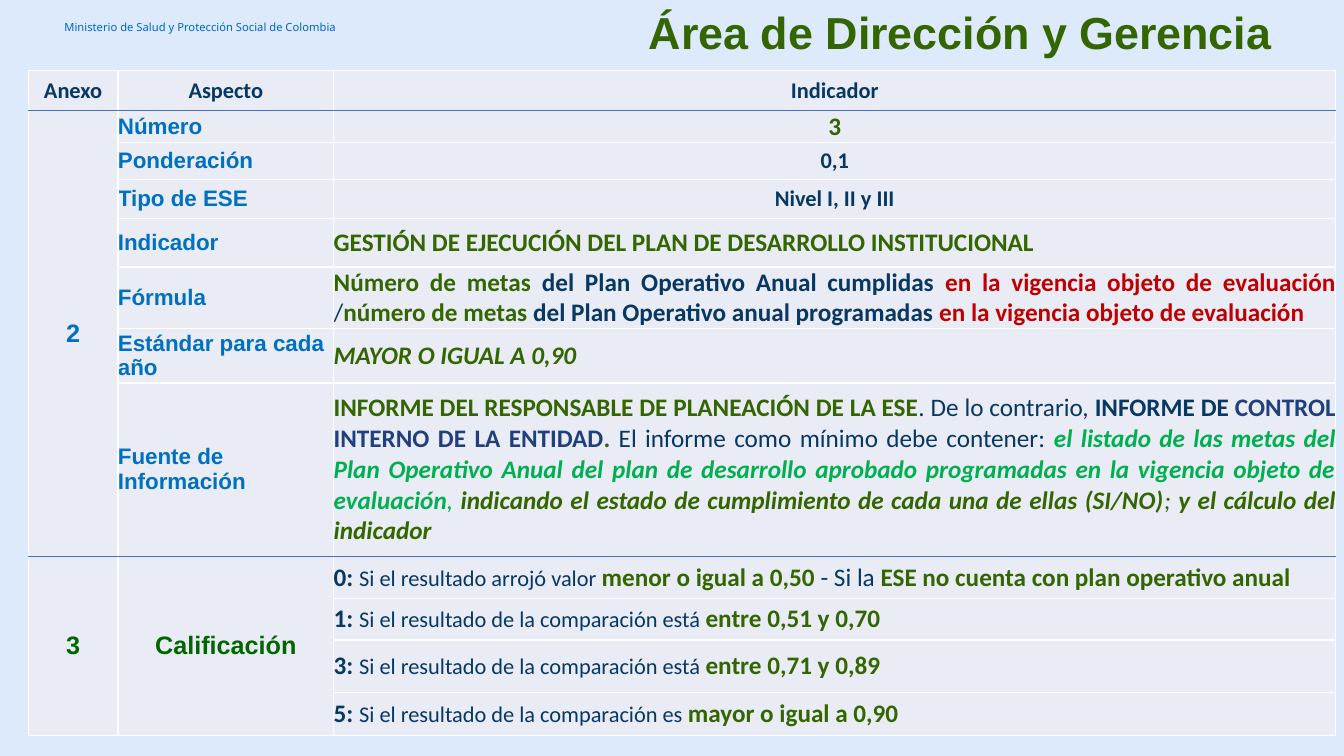
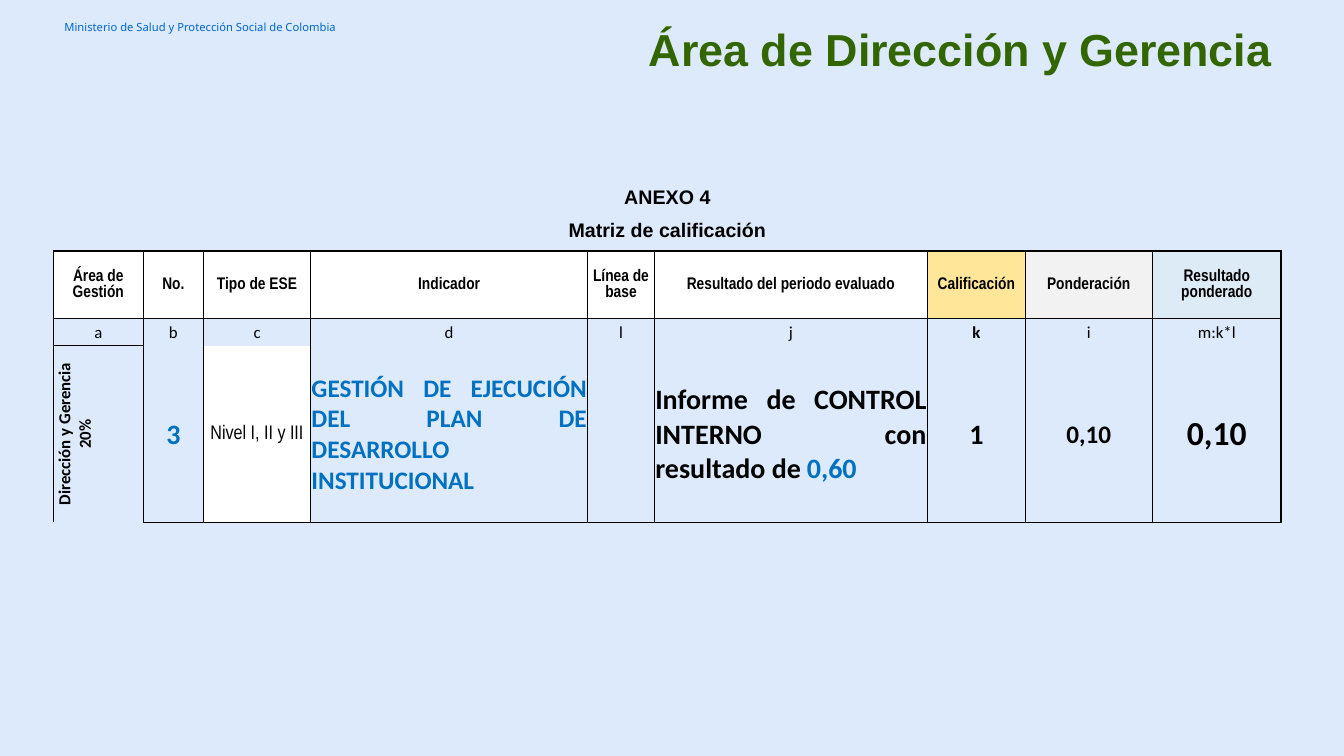
from lxml import etree
from pptx import Presentation
from pptx.dml.color import RGBColor
from pptx.enum.text import MSO_ANCHOR as Anchor, MSO_AUTO_SIZE as Auto, PP_ALIGN as Align
from pptx.oxml.ns import qn
from pptx.util import Inches, Pt

# Palette
SKY, PALE, WHITE, BLACK = "DCEAFB", "E9EBF5", "FFFFFF", "000000"
NAVY, BLUE, LINE, LINK = "073763", "0070C0", "4472C4", "0066CD"
GREEN, DARK, LIME, RED, ROYAL = "336600", "006600", "00B050", "C00000", "1F3F7D"
LEFT, MID, RIGHT, FULL = Align.LEFT, Align.CENTER, Align.RIGHT, Align.JUSTIFY
PLAN = "GESTIÓN DE EJECUCIÓN DEL PLAN DE DESARROLLO INSTITUCIONAL"
LEVEL = "Nivel I, II y III"


def rgb(code):
    return RGBColor.from_string(code)


class Deck:
    """Shared style and the current slide."""

    def __init__(self):
        self.prs = Presentation()
        self.prs.slide_width, self.prs.slide_height = Inches(13.33), Inches(7.5)
        back = self.prs.slide_master.background.fill
        back.solid()
        back.fore_color.rgb = rgb(SKY)
        self.layout = self.prs.slide_layouts[5]
        self.page = None

    def slide(self, title, top):
        first = self.page is None
        self.page = self.prs.slides.add_slide(self.layout)
        if first:
            self.band("Ministerio de Salud y Protección Social de Colombia")
        box = self.page.shapes.title
        self.place(box, 5.56, top, 7.16, 0.7)
        para = self.text(box.text_frame, title, "Arial", 32, GREEN, RIGHT)
        para.line_spacing = 0.9

    def place(self, shape, left, top, width, height):
        shape.left, shape.top = Inches(left), Inches(top)
        shape.width, shape.height = Inches(width), Inches(height)
        frame = shape.text_frame
        frame.word_wrap, frame.auto_size = True, Auto.NONE
        frame.vertical_anchor = Anchor.MIDDLE

    def band(self, text):
        """Put the header line on the layout, shared by all slides."""
        box = self.page.shapes.add_textbox(0, 0, 0, 0)
        self.place(box, 0.54, 0.14, 3.12, 0.26)
        self.text(box.text_frame, text, "Noto Sans", 8, LINK, LEFT, "")
        self.layout.shapes.element.append(box.element)

    def style(self, font, colour, mode, size):
        font.color.rgb = rgb(colour)
        font.bold, font.italic = "b" in mode, "i" in mode
        if size:
            font.size = Pt(size)

    def text(self, frame, words, face, size, colour=BLACK, align=MID, mode="b"):
        """Set plain text, or a list of (text, colour, mode[, size]) runs."""
        para = frame.paragraphs[0]
        para.alignment = align
        para.font.name, para.font.size = face, Pt(size)
        if isinstance(words, str):
            para.add_run().text = words
            self.style(para.font, colour, mode, size)
        else:
            for part, tint, look, *own in words:
                run = para.add_run()
                run.text = part
                self.style(run.font, tint, look, own[0] if own else None)
        return para

    def table(self, left, top, cols, rows):
        frame = self.page.shapes.add_table(
            len(rows), len(cols), Inches(left), Inches(top),
            Inches(sum(cols)), Inches(sum(rows)))
        grid = frame.table
        grid.first_row = grid.horz_banding = False
        for col, width in zip(grid.columns, cols):
            col.width = Inches(width)
        for row, height in zip(grid.rows, rows):
            row.height = Inches(height)
        return grid

    def cell(self, cell, pad, edges, fill=None):
        """Edges maps L, R, T, B to (colour, points); a missing one is clear."""
        cell.margin_left = cell.margin_right = cell.margin_top = Inches(pad)
        cell.margin_bottom = 0
        cell.vertical_anchor = Anchor.MIDDLE
        props = cell._tc.get_or_add_tcPr()
        for side in "LRTB":
            line = etree.SubElement(props, qn("a:ln" + side))
            if side in edges:
                colour, width = edges[side]
                line.set("w", str(Pt(width)))
                paint = etree.SubElement(line, qn("a:solidFill"))
                etree.SubElement(paint, qn("a:srgbClr")).set("val", colour)
            else:
                etree.SubElement(line, qn("a:noFill"))
        if fill:
            cell.fill.solid()
            cell.fill.fore_color.rgb = rgb(fill)
        else:
            cell.fill.background()


def sheet(deck):
    """Indicator sheet."""
    deck.slide("Área de Dirección y Gerencia", 0)
    grid = deck.table(
        0.28, 0.7, [0.89, 2.14, 9.94],
        [0.4, 0.31, 0.37, 0.39, 0.48, 0.6, 0.54, 1.72, 0.42, 0.41, 0.52, 0.43])
    grid.cell(1, 0).merge(grid.cell(7, 0))
    for col in (0, 1):
        grid.cell(8, col).merge(grid.cell(11, col))

    # Borders: blue under the heading and above the scores
    for row in range(12):
        for col in range(3):
            cell = grid.cell(row, col)
            last = row + (cell.span_height if cell.is_merge_origin else 1) - 1
            edges = dict.fromkeys("LR", (WHITE, 1))
            edges["T"] = (LINE if row in (1, 8) else WHITE, 1)
            edges["B"] = (LINE if last in (0, 7) else WHITE, 1)
            deck.cell(cell, 0, edges, PALE)

    def put(row, col, *spec):
        deck.text(grid.cell(row, col).text_frame, *spec)

    # Heading and side labels
    for col, name in enumerate(["Anexo", "Aspecto", "Indicador"]):
        put(0, col, name, "Calibri", 16, NAVY)
    put(1, 0, "2", "Arial", 18, BLUE)
    put(8, 0, "3", "Arial", 18, DARK)
    put(8, 1, "Calificación", "Arial", 18, DARK)
    names = ["Número", "Ponderación", "Tipo de ESE", "Indicador", "Fórmula",
             "Estándar para cada año", "Fuente de Información"]
    for row, name in enumerate(names, 1):
        put(row, 1, name, "Arial", 16, BLUE, LEFT)

    # Values
    term = "en la vigencia objeto de evaluación"
    rule = [
        ("Número de metas ", GREEN, "b"),
        ("del Plan Operativo Anual cumplidas ", NAVY, "b"),
        (term + " ", RED, "b"),
        ("/", NAVY, ""),
        ("número de metas ", GREEN, "b"),
        ("del Plan Operativo anual programadas ", NAVY, "b"),
        (term, RED, "b")]
    source = [
        ("INFORME DEL RESPONSABLE DE PLANEACIÓN DE LA ESE", GREEN, "b"),
        (". De lo contrario, ", NAVY, ""),
        ("INFORME DE ", NAVY, "b"),
        ("CONTROL INTERNO DE LA ENTIDAD", ROYAL, "b"),
        (". ", GREEN, "b"),
        ("El informe como mínimo debe contener: ", NAVY, ""),
        ("el listado de las metas del Plan Operativo Anual del plan de "
         "desarrollo aprobado programadas " + term, LIME, "bi"),
        (", ", LIME, "i"),
        ("indicando el estado de cumplimiento de cada una de ellas (SI/NO)",
         GREEN, "bi"),
        ("; ", GREEN, "i"),
        ("y el cálculo del indicador", GREEN, "bi")]
    values = [
        ("3", 18, GREEN, MID), ("0,1", 16, NAVY, MID), (LEVEL, 16, NAVY, MID),
        (PLAN, 18, GREEN, FULL), (rule, 18, GREEN, FULL),
        ("MAYOR O IGUAL A 0,90", 18, GREEN, LEFT, "bi"),
        (source, 18, GREEN, FULL)]
    for row, (text, *spec) in enumerate(values, 1):
        put(row, 2, text, "Calibri", *spec)

    # Scores
    same = "Si el resultado de la comparación "
    scores = [
        ("0: ", "Si el resultado arrojó valor ", "menor o igual a 0,50 "),
        ("1: ", same + "está ", "entre 0,51 y 0,70"),
        ("3: ", same + "está ", "entre 0,71 y 0,89"),
        ("5: ", same + "es ", "mayor o igual a 0,90")]
    for row, (mark, lead, span) in enumerate(scores, 8):
        runs = [(mark, NAVY, "b"), (lead, NAVY, "", 16), (span, GREEN, "b")]
        if row == 8:
            runs += [("- Si la ", NAVY, ""),
                     ("ESE no cuenta con plan operativo anual", GREEN, "b")]
        put(row, 2, runs, "Calibri", 18, NAVY, FULL if row == 8 else LEFT)


def matrix(deck):
    """Rating matrix."""
    deck.slide("Área de Dirección y Gerencia", 0.17)
    grid = deck.table(
        0.53, 1.84, [0.89, 0.6, 1.06, 2.75, 0.66, 2.71, 0.97, 1.26, 1.28],
        [0.24, 0.41, 0.67, 0.27, 1.75])
    thin, thick = (BLACK, 0.5), (BLACK, 1.5)

    # Captions
    for row, text in enumerate(["ANEXO 4", "Matriz de calificación"]):
        grid.cell(row, 0).merge(grid.cell(row, 8))
        for col in range(9):
            deck.cell(grid.cell(row, col), 0.01, {"B": thick} if row else {})
        deck.text(grid.cell(row, 0).text_frame, text, "Arial", 14)

    # Columns: heading, heading fill, letter, value
    report = [("Informe de CONTROL INTERNO con resultado de", BLACK, "b"),
              (" ", BLACK, "b", 18), ("0,60", BLUE, "b")]
    cols = [
        ("Área de Gestión", WHITE, "a", ("Dirección y Gerencia 20%", "Calibri", 12)),
        ("No.", WHITE, "b", ("3", "Calibri", 20, BLUE)),
        ("Tipo de ESE", WHITE, "c", (LEVEL, "Arial Narrow", 14, BLACK, MID, "")),
        ("Indicador", WHITE, "d", (PLAN, "Calibri", 18, BLUE, FULL)),
        ("Línea de base", WHITE, "l", None),
        ("Resultado del periodo evaluado", WHITE, "j",
         (report, "Calibri", 20, BLACK, FULL)),
        ("Calificación", "FFE699", "k", ("1", "Calibri", 20)),
        ("Ponderación", "F2F2F2", "i", ("0,10", "Calibri", 18)),
        ("Resultado ponderado", "DDEBF7", "m:k*l", ("0,10", "Calibri", 24))]
    for col, (name, fill, mark, value) in enumerate(cols):
        head, key, body = (grid.cell(row, col) for row in (2, 3, 4))
        sides = {"L": thin if col else thick, "R": thick if col == 8 else thin}
        deck.cell(head, 0.01, {**sides, "T": thick, "B": thin}, fill)
        first = {} if col else {"B": thin}
        deck.cell(key, 0.01, {**sides, "T": thin, **first})
        base = {"B": thin if mark in "jk" else (BLACK, 1)} if col else {"T": thin}
        deck.cell(body, 0.01, {**sides, **base}, WHITE if mark == "c" else None)
        deck.text(head.text_frame, name, "Arial Narrow", 12)
        deck.text(key.text_frame, mark, "Calibri", 12, BLACK, MID,
                  "b" if mark == "k" else "")
        if value:
            deck.text(body.text_frame, *value)
    grid.cell(4, 0)._tc.get_or_add_tcPr().set("vert", "vert270")


def main():
    deck = Deck()
    sheet(deck)
    matrix(deck)
    deck.prs.save("out.pptx")


if __name__ == "__main__":
    main()
